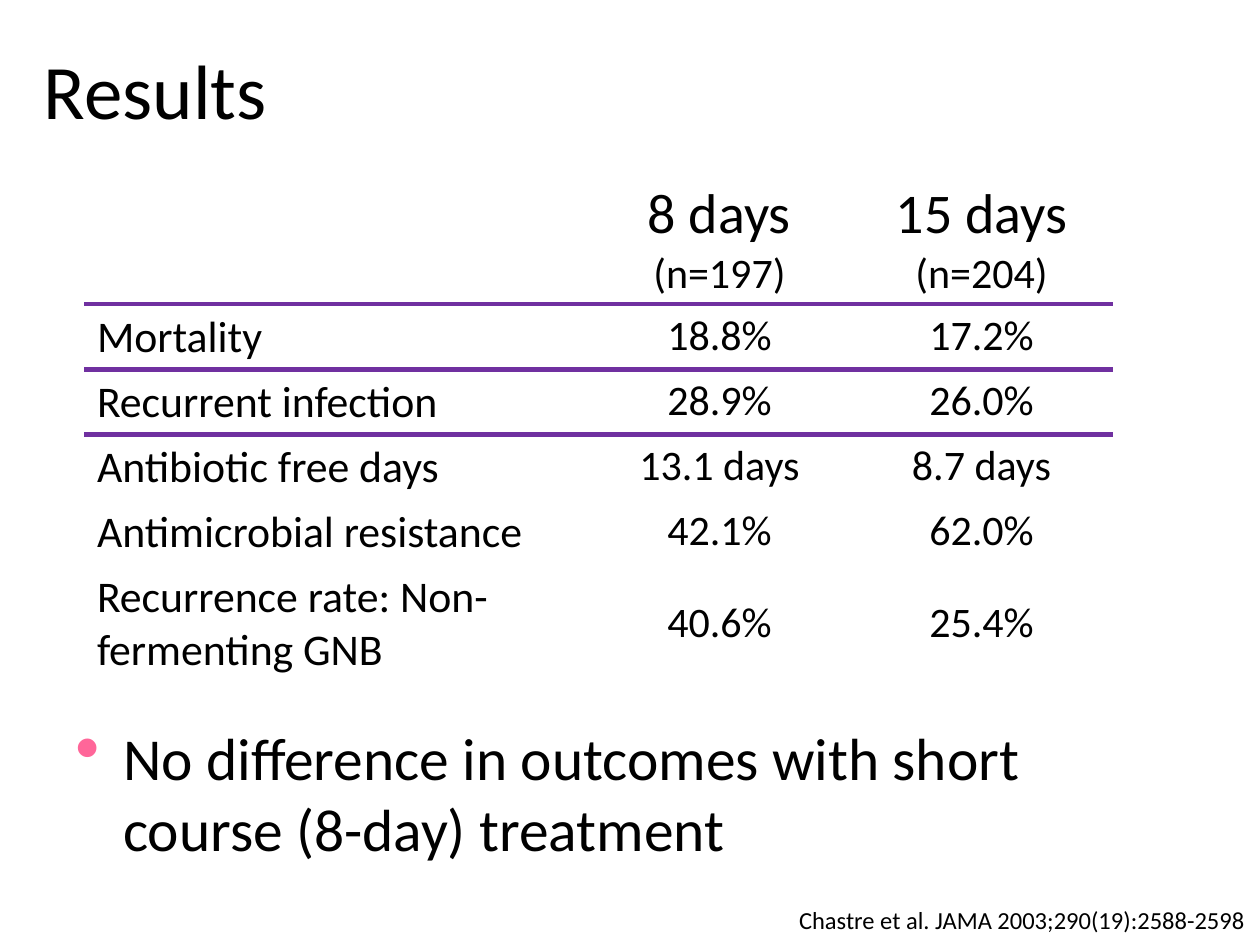
from typing import NamedTuple

from lxml.etree import SubElement
from pptx import Presentation
from pptx.dml.color import RGBColor
from pptx.enum.text import MSO_ANCHOR, PP_ALIGN
from pptx.oxml.ns import qn
from pptx.util import Inches, Pt

BLACK = RGBColor(0x00, 0x00, 0x00)
PURPLE = RGBColor(0x70, 0x30, 0xA0)
PINK = RGBColor(0xFF, 0x66, 0x99)
FONT = "Calibri"
NO_STYLE = "{2D5ABB26-0587-4C30-8999-92F81FD0307C}"


class Outcome(NamedTuple):
    label: str
    short_course: str
    long_course: str


class Arm(NamedTuple):
    duration: str
    patients: str


ARMS = [Arm("8 days ", "(n=197)"), Arm("15 days ", "(n=204)")]
OUTCOMES = [
    Outcome("Mortality", "18.8%", "17.2%"),
    Outcome("Recurrent infection", "28.9%", "26.0%"),
    Outcome("Antibiotic free days", "13.1 days", "8.7 days"),
    Outcome("Antimicrobial resistance", "42.1%", "62.0%"),
    Outcome("Recurrence rate: Non-fermenting GNB", "40.6%", "25.4%"),
]
COLUMN_WIDTHS = [4, 2.08, 2.08]
ROW_HEIGHTS = [1.01] + [0.51] * 4 + [0.91]


def format_run(run, size: float) -> None:
    run.font.name = FONT
    run.font.size = Pt(size)
    run.font.color.rgb = BLACK


def add_text(slide, text: str, left: float, top: float, width: float,
             height: float, size: float, anchor=MSO_ANCHOR.MIDDLE):
    """Add a wrapped one-paragraph text box and return its paragraph."""
    frame = slide.shapes.add_textbox(
        Inches(left), Inches(top), Inches(width), Inches(height)).text_frame
    frame.word_wrap = True
    frame.vertical_anchor = anchor
    frame.text = text
    paragraph = frame.paragraphs[0]
    format_run(paragraph.runs[0], size)
    return paragraph


def set_indent(paragraph, left: float, first_line: float):
    properties = paragraph._p.get_or_add_pPr()
    properties.set("marL", str(Inches(left)))
    properties.set("indent", str(Inches(first_line)))
    return properties


def add_bullet(paragraph) -> None:
    properties = set_indent(paragraph, 0.38, -0.38)
    color = SubElement(properties, qn("a:buClr"))
    SubElement(color, qn("a:srgbClr"), val=str(PINK))
    SubElement(properties, qn("a:buSzPct"), val="120000")
    SubElement(properties, qn("a:buChar"), char="•")


def set_border(cell, edge: str) -> None:
    """Draw a purple rule on one edge, given as 'lnT' or 'lnB'."""
    properties = cell._tc.get_or_add_tcPr()
    line = SubElement(properties, qn(f"a:{edge}"), w=str(Pt(3)))
    fill = SubElement(line, qn("a:solidFill"))
    SubElement(fill, qn("a:srgbClr"), val=str(PURPLE))
    properties.insert(0, line)


def fill_cell(cell, text: str, size: float, align, anchor) -> None:
    cell.text = text
    cell.vertical_anchor = anchor
    paragraph = cell.text_frame.paragraphs[0]
    paragraph.alignment = align
    format_run(paragraph.runs[0], size)


def add_results_table(slide) -> None:
    table = slide.shapes.add_table(
        len(ROW_HEIGHTS), len(COLUMN_WIDTHS), Inches(0.67), Inches(1.38),
        Inches(sum(COLUMN_WIDTHS)), Inches(sum(ROW_HEIGHTS))).table
    table._tbl.tblPr.find(qn("a:tableStyleId")).text = NO_STYLE
    table.first_row = table.horz_banding = False
    for column, width in zip(table.columns, COLUMN_WIDTHS):
        column.width = Inches(width)
    for row, height in zip(table.rows, ROW_HEIGHTS):
        row.height = Inches(height)

    for column, arm in enumerate(ARMS, start=1):
        header = table.cell(0, column)
        fill_cell(header, arm.duration, 32, PP_ALIGN.CENTER, MSO_ANCHOR.MIDDLE)
        patients = header.text_frame.paragraphs[0].add_run()
        patients.text = arm.patients
        format_run(patients, 24)

    for row, outcome in enumerate(OUTCOMES, start=1):
        is_last = row == len(OUTCOMES)
        anchor = MSO_ANCHOR.MIDDLE if is_last else MSO_ANCHOR.TOP
        for column, text in enumerate(outcome):
            size, align = (24, PP_ALIGN.CENTER) if column else (25, PP_ALIGN.LEFT)
            fill_cell(table.cell(row, column), text, size, align, anchor)

    for cell in table.iter_cells():
        cell.fill.background()
    for row_above in (0, 1):
        for column in range(len(COLUMN_WIDTHS)):
            set_border(table.cell(row_above, column), "lnB")
            set_border(table.cell(row_above + 1, column), "lnT")
    # The schema wants the top edge ahead of the bottom edge.
    for cell in table.rows[1].cells:
        properties = cell._tc.tcPr
        properties.insert(0, properties.find(qn("a:lnT")))


def main() -> None:
    presentation = Presentation()
    presentation.slide_width = Inches(10)
    presentation.slide_height = Inches(7.5)
    slide = presentation.slides.add_slide(presentation.slide_layouts[6])

    title = add_text(slide, "Results", 0, 0.08, 9, 1.25, 44)
    set_indent(title, 0.25, 0)
    add_results_table(slide)
    citation = add_text(slide, "Chastre et al. JAMA 2003;290(19):2588-2598",
                        4, 7.13, 5.98, 0.34, 14)
    citation.alignment = PP_ALIGN.RIGHT
    conclusion = add_text(
        slide, "No difference in outcomes with short course (8-day) treatment",
        0.5, 5.67, 9, 1.28, 34, MSO_ANCHOR.TOP)
    add_bullet(conclusion)

    presentation.save("out.pptx")


if __name__ == "__main__":
    main()
